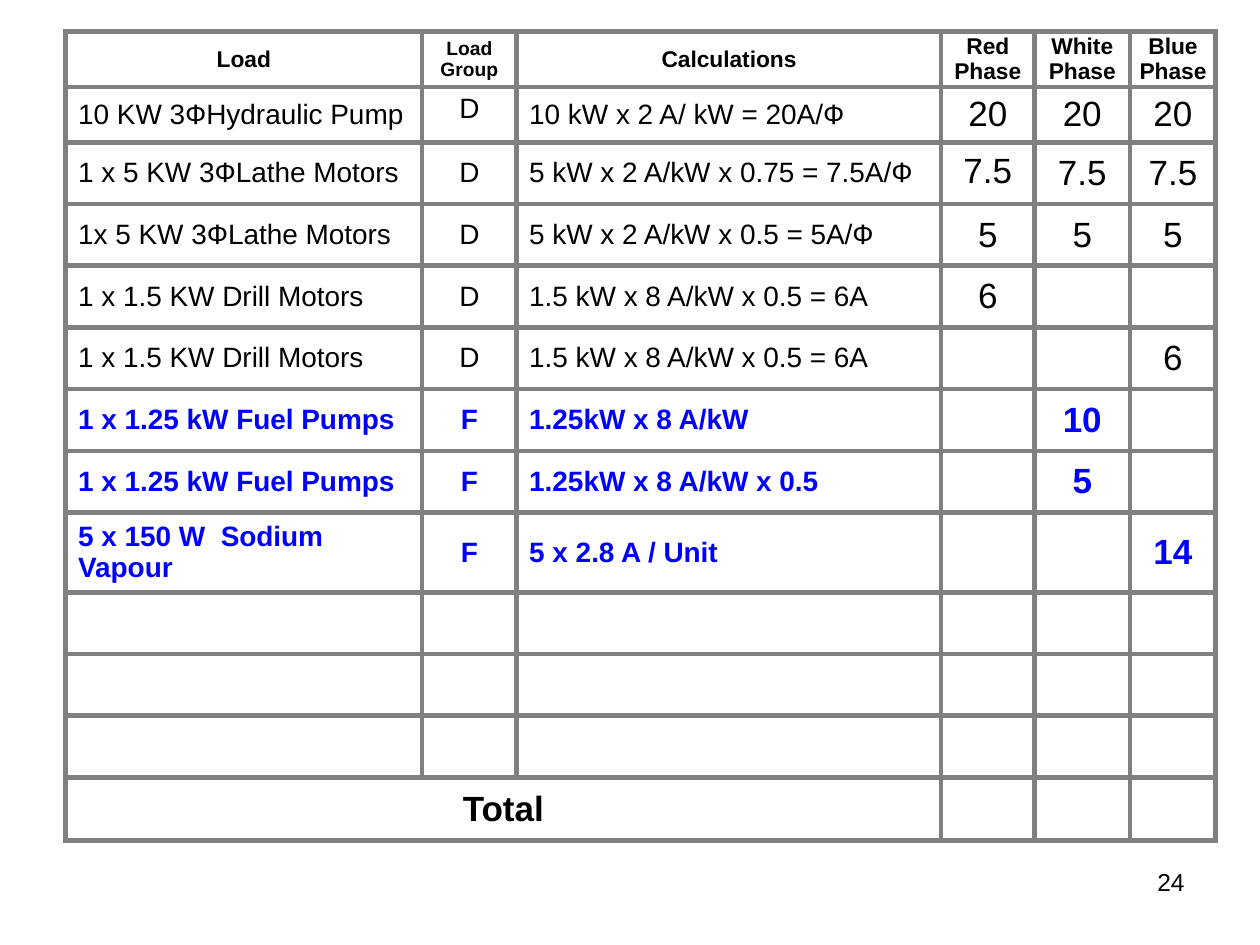
import pptx
import pptx.dml.color
import pptx.enum.text
import pptx.oxml
import pptx.oxml.ns
import pptx.util
from pptx.util import Inches

ALIGN = pptx.enum.text.PP_ALIGN
ANCHOR = pptx.enum.text.MSO_ANCHOR
BLACK, BLUE, GREY, WHITE = "000000", "0000FF", "808080", "FFFFFF"

COLUMN_WIDTHS = [2.83, 0.75, 3.37, 0.74, 0.76, 0.68]
ROW_HEIGHTS = [0.44] * 2 + [0.49] * 10 + [0.5]
HEADINGS = ["Load", "Load Group", "Calculations", "Red Phase", "White Phase", "Blue Phase"]
LOADS = [
    ["10 KW 3ФHydraulic Pump", "D", "10 kW x 2 A/ kW = 20A/Ф", "20", "20", "20"],
    ["1 x 5 KW 3ФLathe Motors", "D", "5 kW x 2 A/kW x 0.75 = 7.5A/Ф", "7.5", "7.5", "7.5"],
    ["1x 5 KW 3ФLathe Motors", "D", "5 kW x 2 A/kW x 0.5 = 5A/Ф", "5", "5", "5"],
    ["1 x 1.5 KW Drill Motors", "D", "1.5 kW x 8 A/kW x 0.5 = 6A", "6", "", ""],
    ["1 x 1.5 KW Drill Motors", "D", "1.5 kW x 8 A/kW x 0.5 = 6A", "", "", "6"],
    ["1 x 1.25 kW Fuel Pumps", "F", "1.25kW x 8 A/kW", "", "10", ""],
    ["1 x 1.25 kW Fuel Pumps", "F", "1.25kW x 8 A/kW x 0.5", "", "5", ""],
    ["5 x 150 W  Sodium Vapour", "F", "5 x 2.8 A / Unit", "", "", "14"],
]


def color(value):
    return pptx.dml.color.RGBColor.from_string(value)


class SlideBuilder:
    font = "Arial"
    border_width = 3

    def __init__(self, page):
        self.page = page

    def add_span(self, para, text, size, ink=BLACK, bold=False, align=ALIGN.LEFT):
        para.alignment = align
        span = para.add_run()
        span.text = text
        span.font.name = self.font
        span.font.size = pptx.util.Pt(size)
        span.font.bold = bold
        span.font.color.rgb = color(ink)

    def text(self, left, top, width, height, text, size, align):
        box = self.page.shapes.add_textbox(
            Inches(left), Inches(top), Inches(width), Inches(height))
        box.text_frame.word_wrap = True
        self.add_span(box.text_frame.paragraphs[0], text, size, align=align)

    def border(self, cell):
        properties = cell._tc.get_or_add_tcPr()
        for side in "LRTB":
            properties.append(pptx.oxml.parse_xml(
                f'<a:ln{side} {pptx.oxml.ns.nsdecls("a")} w="{pptx.util.Pt(self.border_width)}">'
                f'<a:solidFill><a:srgbClr val="{GREY}"/></a:solidFill></a:ln{side}>'))

    def table(self, left, top, widths, heights):
        frame = self.page.shapes.add_table(
            len(heights), len(widths), Inches(left), Inches(top),
            Inches(sum(widths)), Inches(sum(heights)))
        grid = frame.table
        grid.first_row = grid.horz_banding = False
        for column, width in zip(grid.columns, widths):
            column.width = Inches(width)
        for row, height in zip(grid.rows, heights):
            row.height = Inches(height)
        for cell in grid.iter_cells():
            self.border(cell)
            cell.fill.background()
            cell.vertical_anchor = ANCHOR.MIDDLE
        return grid

    def cell(self, cell, text, size, ink=BLACK, bold=False, centered=True, tight=False):
        if tight:
            cell.margin_left = cell.margin_right = Inches(0.01)
            cell.margin_top = cell.margin_bottom = 0
        self.add_span(cell.text_frame.paragraphs[0], text, size, ink, bold,
                      ALIGN.CENTER if centered else ALIGN.LEFT)

    def heading(self, cell, text, size):
        cell.fill.solid()
        cell.fill.fore_color.rgb = color(WHITE)
        self.cell(cell, text, size, bold=True, tight=True)


def main():
    deck = pptx.Presentation()
    deck.slide_width, deck.slide_height = Inches(10), Inches(7.5)
    builder = SlideBuilder(deck.slides.add_slide(deck.slide_layouts[6]))

    builder.text(7.17, 6.83, 2.33, 0.52, "24", 14, ALIGN.RIGHT)

    grid = builder.table(0.52, 0.25, COLUMN_WIDTHS, ROW_HEIGHTS)
    for column, heading in enumerate(HEADINGS):
        builder.heading(grid.cell(0, column), heading, 11 if column == 1 else 13)

    for row, load in enumerate(LOADS, start=1):
        fuel_group = load[1] == "F"
        for column, text in enumerate(load):
            if text:
                builder.cell(
                    grid.cell(row, column), text, 20 if column > 2 else 16,
                    BLUE if fuel_group else BLACK, fuel_group,
                    centered=column not in (0, 2),
                    tight=row > 2 and column not in (0, 2))
    grid.cell(1, 1).vertical_anchor = ANCHOR.TOP
    grid.cell(2, 3).text_frame.paragraphs[0].line_spacing = 0.9

    total_row = len(ROW_HEIGHTS) - 1
    total = grid.cell(total_row, 0)
    total.merge(grid.cell(total_row, 2))
    builder.heading(total, "Total", 20)

    deck.save("out.pptx")


if __name__ == "__main__":
    main()
